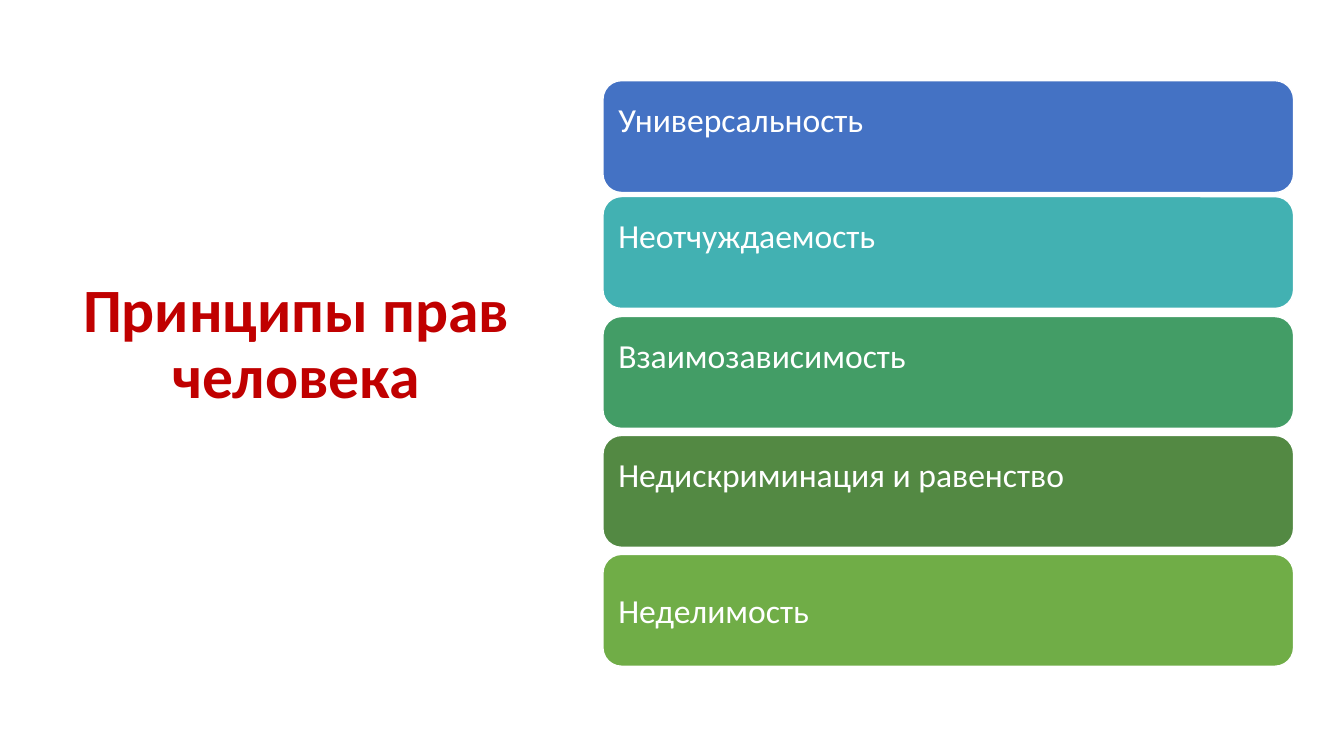
from pptx import Presentation
from pptx.dml.color import RGBColor
from pptx.enum.shapes import MSO_SHAPE
from pptx.enum.text import MSO_ANCHOR, PP_ALIGN
from pptx.util import Inches, Pt

ROUNDED = MSO_SHAPE.ROUNDED_RECTANGLE
TOP, MIDDLE = MSO_ANCHOR.TOP, MSO_ANCHOR.MIDDLE
LEFT, CENTER = PP_ALIGN.LEFT, PP_ALIGN.CENTER

FONT = "Calibri"
COLORS = {
    "title": "C00000",
    "white": "FFFFFF",
    "blue": "4472C4",
    "teal": "42B1B2",
    "green": "439D66",
    "dark_green": "538943",
    "light_green": "70AD47",
}

# Wording, colour, offset from the top of the list, text anchor
PRINCIPLES = [
    ("Универсальность", "blue", 0, TOP),
    ("Неотчуждаемость", "teal", 1.15, TOP),
    ("Взаимозависимость", "green", 2.34, TOP),
    ("Недискриминация и равенство", "dark_green", 3.52, TOP),
    ("Неделимость", "light_green", 4.7, MIDDLE),
]
BAR_HEIGHT = 1.11


def color(name):
    return RGBColor.from_string(COLORS[name])


def write(frame, text, size, color_name, align, anchor, bold=False):
    frame.word_wrap = True
    frame.vertical_anchor = anchor
    paragraph = frame.paragraphs[0]
    paragraph.text = text
    paragraph.alignment = align
    paragraph.font.name = FONT
    paragraph.font.size = Pt(size)
    paragraph.font.bold = bold
    paragraph.font.color.rgb = color(color_name)
    return paragraph


def add_title(slide, left, top, width, height):
    title = slide.shapes.add_textbox(
        Inches(left), Inches(top), Inches(width), Inches(height))
    heading = write(title.text_frame, "Принципы прав человека", 44, "title",
                    CENTER, MIDDLE, bold=True)
    heading.line_spacing = 0.9


def add_principles(slide, left, top, width):
    for wording, fill, offset, anchor in PRINCIPLES:
        bar = slide.shapes.add_shape(
            ROUNDED, Inches(left), Inches(top + offset),
            Inches(width), Inches(BAR_HEIGHT))
        bar.shadow.inherit = False
        bar.fill.solid()
        bar.fill.fore_color.rgb = color(fill)
        bar.line.color.rgb = color("white")
        bar.line.width = Pt(1)
        frame = bar.text_frame
        frame.margin_left = frame.margin_right = Inches(0.1)
        frame.margin_top = frame.margin_bottom = Inches(0.13)
        write(frame, wording, 24, "white", LEFT, anchor)


def main():
    deck = Presentation()
    deck.slide_width = Inches(13.33)
    deck.slide_height = Inches(7.5)
    slide = deck.slides.add_slide(deck.slide_layouts[6])

    # Heading on the left, list of principles on the right
    add_title(slide, 0.12, 2.91, 5.64, 1.04)
    add_principles(slide, 5.98, 0.8, 6.85)

    deck.save("out.pptx")


if __name__ == "__main__":
    main()
